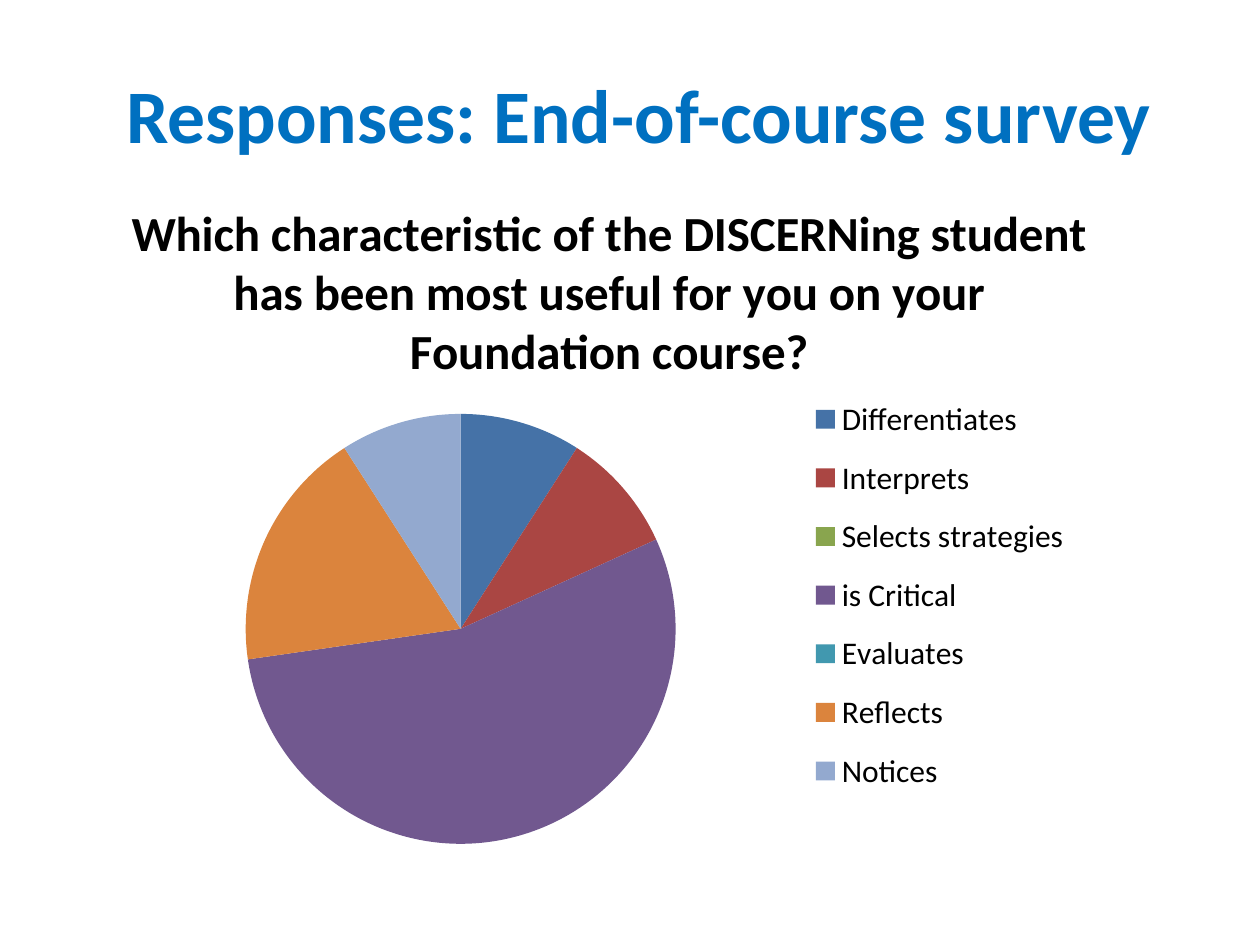
from dataclasses import dataclass
from lxml.etree import SubElement
from pptx import Presentation
from pptx.chart.data import CategoryChartData
from pptx.dml.color import RGBColor
from pptx.enum.chart import XL_CHART_TYPE, XL_LEGEND_POSITION
from pptx.enum.text import MSO_ANCHOR, PP_ALIGN
from pptx.oxml.ns import qn
from pptx.util import Inches, Pt


@dataclass(frozen=True)
class Theme:
    font: str = "Calibri"
    heading: str = "0070C0"
    text: str = "000000"
    heading_size: float = 43.2
    question_size: float = 28
    legend_size: float = 18
    slices: tuple = ("4572A7", "AA4643", "89A54E", "71588F",
                     "4198AF", "DB843D", "93A9CF")


THEME = Theme()
WIDTH, HEIGHT = Inches(10), Inches(7.5)
RESPONSES = {
    "Differentiates": 9,
    "Interprets": 9,
    "Selects strategies": 0,
    "is Critical": 54,
    "Evaluates": 0,
    "Reflects": 18,
    "Notices": 9,
}


def percent(x, y, w, h):
    sides = (WIDTH, HEIGHT, WIDTH, HEIGHT)
    return [int(value * side / 100) for value, side in zip((x, y, w, h), sides)]


def style(font, size, color, bold=False):
    values = {"name": THEME.font, "size": Pt(size), "bold": bold}
    for name, value in values.items():
        setattr(font, name, value)
    font.color.rgb = RGBColor.from_string(color)


def set_layout(parent, after, inner=False, **fractions):
    for old in parent.findall(qn("c:layout")):
        parent.remove(old)
    layout = SubElement(parent, qn("c:layout"))
    manual = SubElement(layout, qn("c:manualLayout"))
    if inner:
        SubElement(manual, qn("c:layoutTarget")).set("val", "inner")
    for axis in "xy":
        SubElement(manual, qn(f"c:{axis}Mode")).set("val", "edge")
    for name, value in fractions.items():
        SubElement(manual, qn(f"c:{name}")).set("val", str(value))
    if after:
        parent.find(qn(after)).addnext(layout)
    else:
        parent.insert(0, layout)


def add_heading(s, box, text):
    tf = s.shapes.add_textbox(*box).text_frame
    for name, value in {"word_wrap": True,
                        "vertical_anchor": MSO_ANCHOR.MIDDLE}.items():
        setattr(tf, name, value)
    p = tf.paragraphs[0]
    p.alignment = PP_ALIGN.CENTER
    r = p.add_run()
    r.text = text
    style(r.font, THEME.heading_size, THEME.heading, True)


def add_survey_pie(s, box, question, responses):
    data = CategoryChartData()
    data.categories = list(responses)
    data.add_series("Series 1", list(responses.values()))
    chart = s.shapes.add_chart(XL_CHART_TYPE.PIE, *box, data).chart
    style(chart.font, THEME.legend_size, THEME.text)

    chart.has_title = True
    title = chart.chart_title
    p = title.text_frame.paragraphs[0]
    r = p.add_run()
    r.text = question
    style(r.font, THEME.question_size, THEME.text, True)
    title.include_in_layout = False
    set_layout(title._element, "c:tx", x=0.1, y=0.01)

    chart.has_legend = True
    legend = chart.legend
    for name, value in {"position": XL_LEGEND_POSITION.RIGHT,
                        "include_in_layout": False}.items():
        setattr(legend, name, value)
    style(legend.font, THEME.legend_size, THEME.text)
    set_layout(legend._element, "c:legendPos", x=0.63, y=0.29, w=0.27, h=0.64)

    plot = chart.plots[0]
    plot.vary_by_categories = True
    for i, color in enumerate(THEME.slices):
        fill = plot.series[0].points[i].format.fill
        fill.solid()
        fill.fore_color.rgb = RGBColor.from_string(color)
    set_layout(plot._element.getparent(), None, inner=True,
               x=0.2, y=0.34, w=0.35, h=0.64)


def main():
    prs = Presentation()
    prs.slide_width, prs.slide_height = WIDTH, HEIGHT
    s = prs.slides.add_slide(prs.slide_layouts[6])
    add_heading(s, percent(6.7, 3.5, 88, 17),
                "Responses: End-of-course survey")
    add_survey_pie(s, percent(0, 19.5, 97.5, 71.3),
                   "Which characteristic of the DISCERNing student has been "
                   "most useful for you on your Foundation course?", RESPONSES)
    prs.save("out.pptx")


if __name__ == "__main__":
    main()
